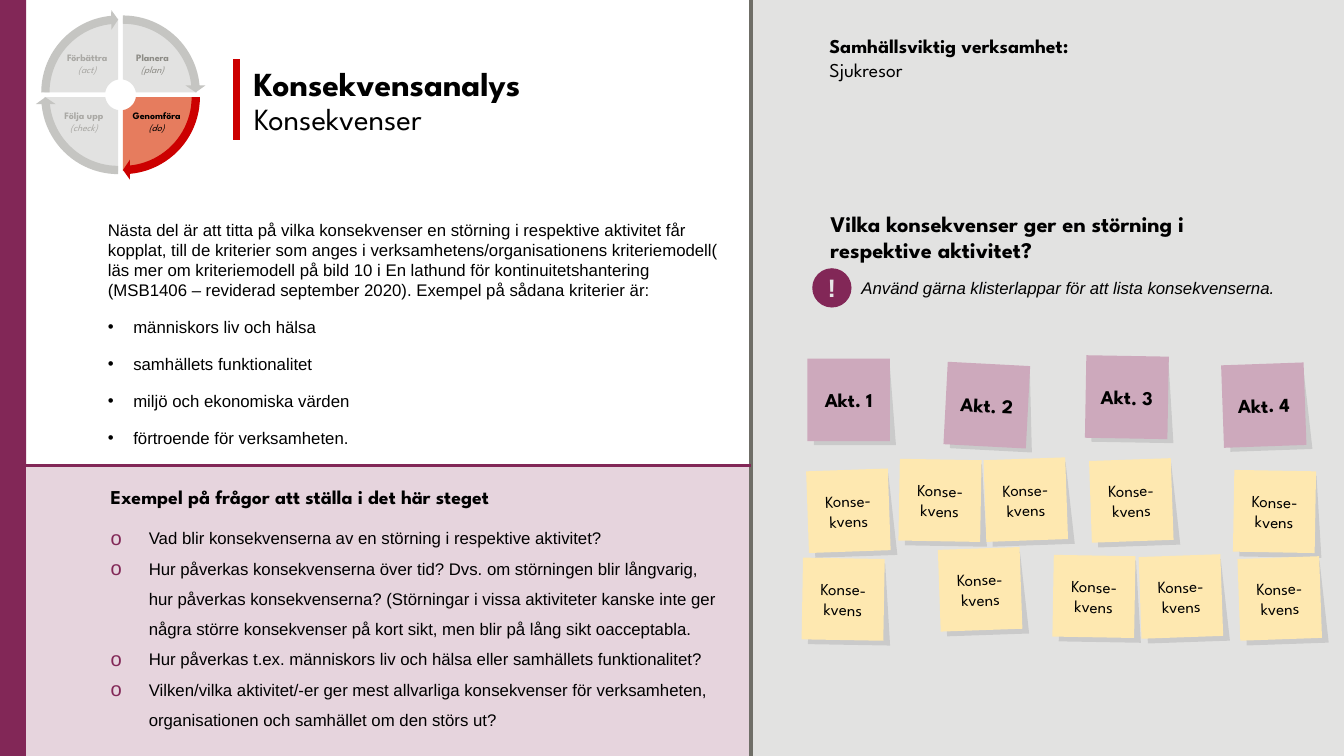
import math
import pptx
import pptx.dml.color
import pptx.enum.shapes
import pptx.enum.text
import pptx.oxml
import pptx.oxml.ns
import pptx.util
from lxml import etree

Cm, Pt = pptx.util.Cm, pptx.util.Pt
SHAPE = pptx.enum.shapes.MSO_SHAPE
ANCHOR = pptx.enum.text.MSO_ANCHOR
CENTER = pptx.enum.text.PP_ALIGN.CENTER
HEADING, BODY = "League Spartan", "Arial"
COLORS = {
    "plum": "822757", "mauve": "CDA9BC", "pale": "E6D4DD", "yellow": "FEE8B0",
    "panel": "E2E2E1", "ring": "C5C5C2", "divider": "6F6E67", "red": "CC0000",
    "orange": "E67C5E", "black": "000000", "white": "E7E6E6",
    "faded": "A9A8A4", "dim": "8C8B85",
}

# Content: a run is (text, size, font, style), a paragraph is a list of runs
TITLE = [[("Konsekvensanalys\n", 24, HEADING, "b"), ("Konsekvenser", 22, HEADING, "")]]
INTRO = ("Nästa del är att titta på vilka konsekvenser en störning i respektive aktivitet får "
         "kopplat, till de kriterier som anges i verksamhetens/organisationens kriteriemodell( "
         "läs mer om kriteriemodell på bild 10 i En lathund för kontinuitetshantering "
         "(MSB1406 – reviderad september 2020). Exempel på sådana kriterier är:")
CRITERIA = ["människors liv och hälsa", "samhällets funktionalitet",
            "miljö och ekonomiska värden", "förtroende för verksamheten."]
QUESTIONS_HEADING = "Exempel på frågor att ställa i det här steget"
QUESTIONS = [
    "Vad blir konsekvenserna av en störning i respektive aktivitet?",
    "Hur påverkas konsekvenserna över tid? Dvs. om störningen blir långvarig, hur påverkas "
    "konsekvenserna? (Störningar i vissa aktiviteter kanske inte ger några större "
    "konsekvenser på kort sikt, men blir på lång sikt oacceptabla.",
    "Hur påverkas t.ex. människors liv och hälsa eller samhällets funktionalitet?",
    "Vilken/vilka aktivitet/-er ger mest allvarliga konsekvenser för verksamheten, "
    "organisationen och samhället om den störs ut?",
]
ACTIVITY = [[("Samhällsviktig verksamhet: \n", 14, HEADING, "b"), ("Sjukresor", 14, HEADING, "")]]
PROMPT = "Vilka konsekvenser ger en störning i respektive aktivitet?"
TIP = "Använd gärna klisterlappar för att lista konsekvenserna."

# Notes: left, top, rotation
CONSEQUENCE = "Konse-\nkvens"
CONSEQUENCE_NOTES = [
    (20.35, 11.84, -2), (20.22, 14.07, 1), (27.48, 11.58, -2), (26.54, 14, 1),
    (28.73, 14, -2), (31.09, 11.86, 1), (31.22, 14.05, -2),
    (22.66, 11.58, 1), (24.82, 11.56, -2), (23.67, 13.82, -2),
]
ACTIVITY_NOTES = [("Akt. 1", 20.35, 9.04, 0), ("Akt. 2", 23.83, 9.17, 3),
                  ("Akt. 3", 27.36, 8.97, 1), ("Akt. 4", 30.81, 9.17, -2)]

# Cycle: name, phase, label box, label colour, side x, side y, wedge colour, arrow colour, start
CYCLE = [
    ("Förbättra", "(act)", (1.4, 1.22, 1.6), "faded", -1, -1, "panel", "ring", 108),
    ("Följa upp", "(check)", (1.3, 2.67, 1.63), "faded", -1, 1, "panel", "ring", 54),
    ("Planera", "(plan)", (2.92, 1.22, 1.85), "dim", 1, -1, "panel", "ring", 162),
    ("Genomföra", "(do)", (3, 2.67, 1.9), "black", 1, 1, "orange", "red", 0),
]
HUB_X, HUB_Y, HUB_RADIUS = 3.04, 2.39, 0.39
HALF_GAP, WEDGE_RADIUS, ARROW_SIZE = 0.06, 1.86, 4.17

deck = pptx.Presentation()
deck.slide_width, deck.slide_height = Cm(33.87), Cm(19.05)
page = deck.slides.add_slide(deck.slide_layouts[6])


def rgb(name):
    return pptx.dml.color.RGBColor.from_string(COLORS[name])


def paint(shape, color):
    shape.shadow.inherit = False
    shape.fill.solid()
    shape.fill.fore_color.rgb = rgb(color)
    shape.line.fill.background()
    return shape


def add_block(shapes, kind, left, top, width, height, color):
    return paint(shapes.add_shape(kind, Cm(left), Cm(top), Cm(width), Cm(height)), color)


def add_outline(shapes, points, color):
    corners = [(Cm(x), Cm(y)) for x, y in points]
    builder = shapes.build_freeform(*corners[0])
    builder.add_line_segments(corners[1:], close=True)
    return paint(builder.convert_to_shape(), color)


def add_rule(x1, y1, x2, y2, color, width):
    rule = page.shapes.add_connector(pptx.enum.shapes.MSO_CONNECTOR.STRAIGHT,
                                     Cm(x1), Cm(y1), Cm(x2), Cm(y2))
    rule.line.color.rgb = rgb(color)
    rule.line.width = Pt(width)
    etree.SubElement(rule._element.spPr, pptx.oxml.ns.qn("a:effectLst"))


def add_bullet(para, mark, indent, color, percent):
    properties = para._p.get_or_add_pPr()
    properties.set("marL", str(Cm(indent)))
    properties.set("indent", str(-Cm(indent)))
    for tag, name, value in [("buSzPct", "val", str(percent * 1000)),
                             ("buFont", "typeface", BODY), ("buChar", "char", mark)]:
        etree.SubElement(properties, pptx.oxml.ns.qn("a:" + tag)).set(name, value)
    tint = etree.Element(pptx.oxml.ns.qn("a:buClr"))
    etree.SubElement(tint, pptx.oxml.ns.qn("a:srgbClr")).set("val", COLORS[color])
    properties.insert(0, tint)


def write(frame, paragraphs, color="black", align=None, spacing=None, after=0, bullet=None):
    for index, runs in enumerate(paragraphs):
        para = frame.paragraphs[0] if index == 0 else frame.add_paragraph()
        if bullet and index >= bullet[0]:
            add_bullet(para, *bullet[1:])
        para.alignment = align
        para.line_spacing = spacing
        para.space_after = Pt(after)
        for text, size, font, style in runs:
            for number, line in enumerate(text.split("\n")):
                if number:
                    para.add_line_break()
                if line:
                    span = para.add_run()
                    span.text = line
                    span.font.size, span.font.name = Pt(size), font
                    span.font.bold, span.font.italic = "b" in style, "i" in style
                    span.font.color.rgb = rgb(color)


def add_text(shapes, left, top, width, height, paragraphs, wrap=True,
             anchor=ANCHOR.TOP, **style):
    box = shapes.add_textbox(Cm(left), Cm(top), Cm(width), Cm(height))
    box.text_frame.word_wrap = wrap
    box.text_frame.vertical_anchor = anchor
    write(box.text_frame, paragraphs, **style)


def center_text(shape, paragraphs, side, end, color="black"):
    frame = shape.text_frame
    frame.word_wrap = True
    frame.vertical_anchor = ANCHOR.MIDDLE
    frame.margin_left = frame.margin_right = Cm(side)
    frame.margin_top = frame.margin_bottom = Cm(end)
    write(frame, paragraphs, color, CENTER)


def add_note(left, top, turn, size, color, run, side):
    shapes = page.shapes.add_group_shape().shapes
    x, y = left + 0.16, top + 0.11
    shade = add_outline(shapes, [(x, y), (x + 1.91, y), (x + 2.07, y + 2.07), (x, y + 2.07)], "black")
    tint = shade._element.spPr.find(".//" + pptx.oxml.ns.qn("a:srgbClr"))
    etree.SubElement(tint, pptx.oxml.ns.qn("a:alpha")).set("val", "10000")
    note = add_block(shapes, SHAPE.RECTANGLE, left, top, size, size, color)
    center_text(note, [[run]], side, 0.13)
    shade.rotation = note.rotation = turn


def wedge_points(side_x, side_y):
    edge = math.degrees(math.asin(HALF_GAP / HUB_RADIUS))
    outer = [(HALF_GAP, WEDGE_RADIUS, math.radians(a)) for a in range(0, 91, 3)]
    inner = [(0, HUB_RADIUS, math.radians(90 - edge - (90 - 2 * edge) * n / 12)) for n in range(13)]
    return [(HUB_X + side_x * (shift + radius * math.cos(angle)),
             HUB_Y + side_y * (shift + radius * math.sin(angle)))
            for shift, radius, angle in outer + inner]


# Background panels and dividing lines
add_block(page.shapes, SHAPE.RECTANGLE, 0, 0, 0.66, 19.05, "plum")
add_block(page.shapes, SHAPE.RECTANGLE, 18.92, 0, 14.95, 19.05, "panel")
add_block(page.shapes, SHAPE.RECTANGLE, 0.66, 11.76, 18.28, 7.29, "pale")
add_rule(18.92, 0, 18.92, 19.05, "divider", 2.5)
add_rule(0.66, 11.73, 18.92, 11.73, "plum", 2.5)
add_rule(5.96, 1.49, 5.96, 3.53, "red", 5)

# Left column texts
add_text(page.shapes, 6.15, 1.52, 10.74, 2.11, TITLE, anchor=ANCHOR.MIDDLE, spacing=0.9)
add_text(page.shapes, 2.47, 5.41, 15.98, 6.07,
         [[(text, 12, BODY, "")] for text in [INTRO] + CRITERIA],
         after=12, bullet=(1, "•", 0.64, "black", 100))
add_text(page.shapes, 2.54, 12.09, 10.92, 0.86, [[(QUESTIONS_HEADING, 14, HEADING, "b")]], wrap=False)
add_text(page.shapes, 2.54, 12.93, 15.95, 5.64,
         [[(text, 12, BODY, "")] for text in QUESTIONS],
         spacing=1.5, bullet=(0, "o", 0.96, "plum", 120))

# Right column texts
add_text(page.shapes, 20.65, 0.74, 10.08, 2.06, ACTIVITY)
add_text(page.shapes, 20.68, 5.16, 11.18, 1.63, [[(PROMPT, 16, HEADING, "b")]])
add_text(page.shapes, 21.46, 6.88, 12.7, 0.76, [[(TIP, 12, BODY, "i")]])
badge = add_block(page.shapes, SHAPE.OVAL, 20.47, 6.76, 0.99, 0.99, "plum")
center_text(badge, [[("!", 18, BODY, "b")]], 0, 0, "white")

# Sticky notes
for left, top, turn in CONSEQUENCE_NOTES:
    add_note(left, top, turn, 2.06, "yellow", (CONSEQUENCE, 12, HEADING, ""), 0)
for label, left, top, turn in ACTIVITY_NOTES:
    add_note(left, top, turn, 2.08, "mauve", (label, 14, HEADING, "b"), 0.25)

# Improvement cycle
cycle = page.shapes.add_group_shape().shapes
for name, phase, (left, top, width), ink, side_x, side_y, fill, ring, start in CYCLE:
    add_outline(cycle, wedge_points(side_x, side_y), fill)
    arrow = add_block(cycle, SHAPE.CIRCULAR_ARROW, HUB_X + side_x * HALF_GAP - ARROW_SIZE / 2,
                      HUB_Y + side_y * HALF_GAP - ARROW_SIZE / 2, ARROW_SIZE, ARROW_SIZE, ring)
    for index, value in enumerate([0.05, 3.28, start + 50.72, start, 0.06]):
        arrow.adjustments[index] = value
    add_text(cycle, left, top, width, 0.84, [[(name, 7, HEADING, "b")], [(phase, 7, HEADING, "i")]],
             wrap=False, color=ink, align=CENTER, spacing=0.9, after=1)

deck.save("out.pptx")
